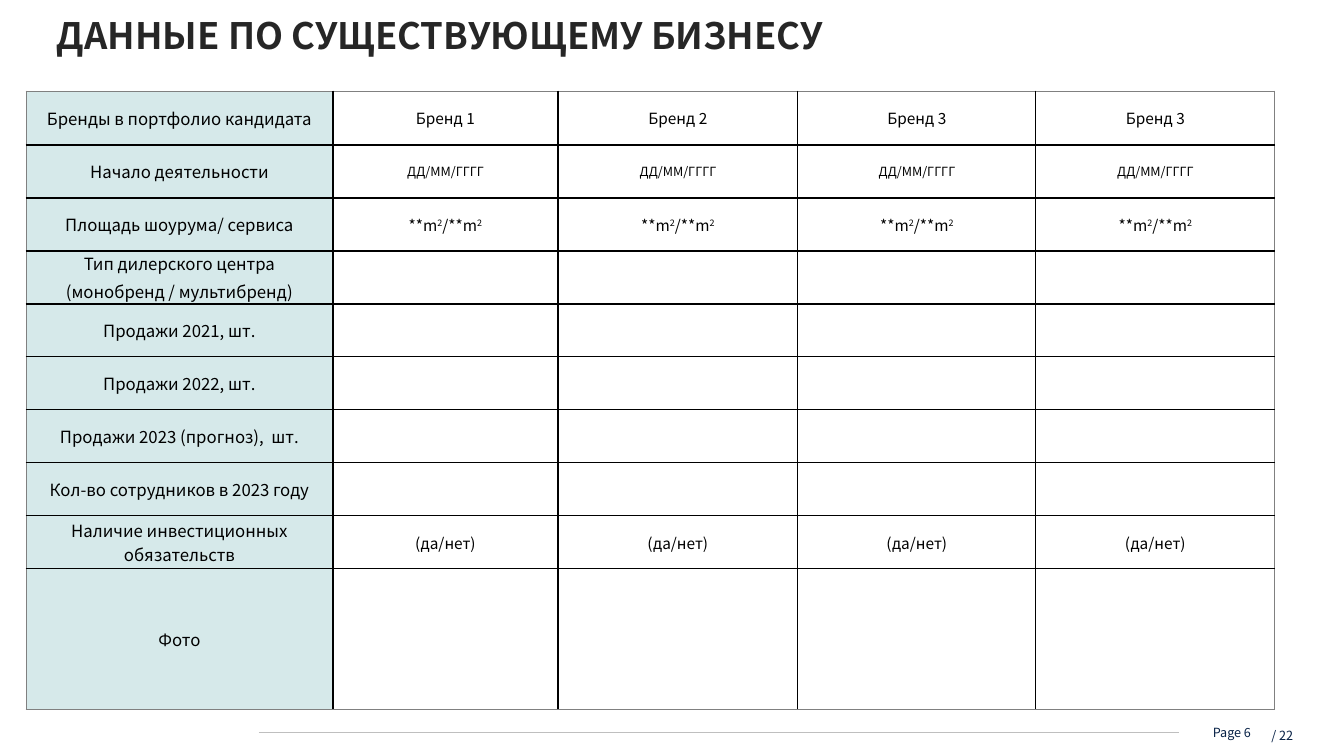
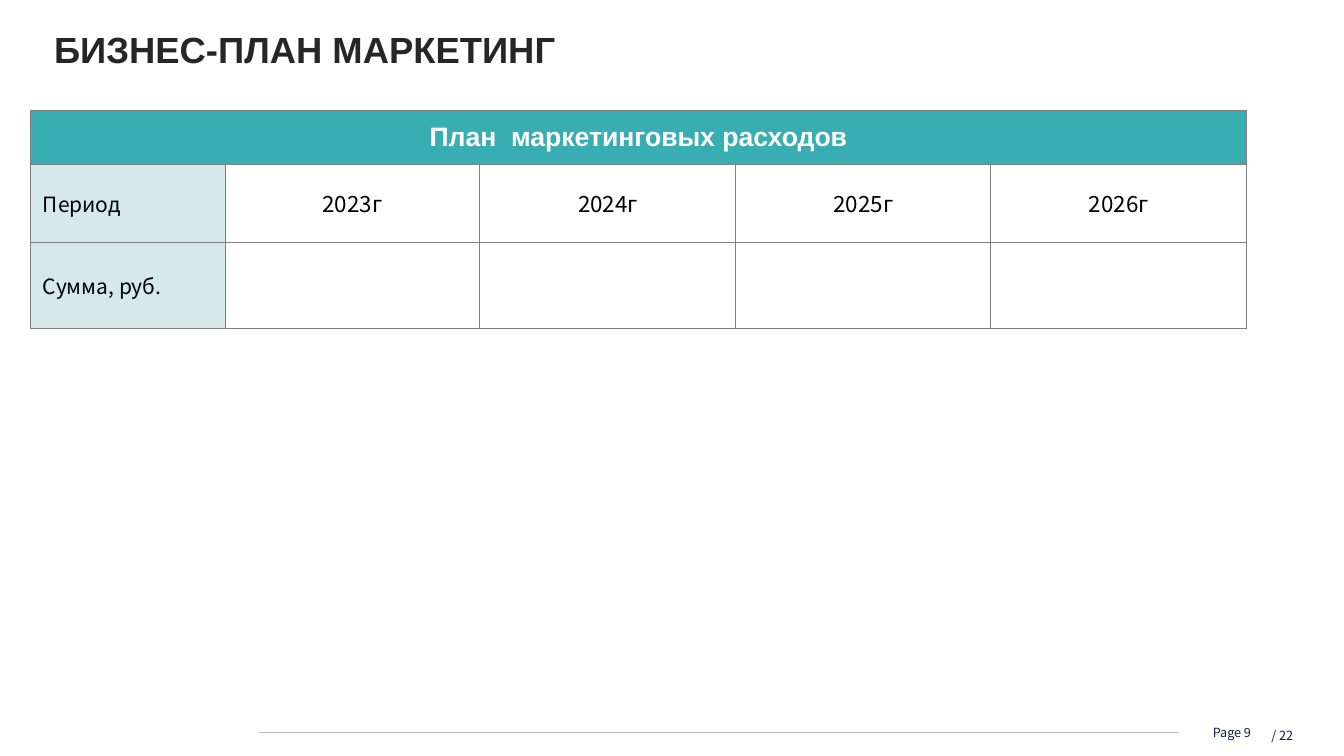
from lxml import etree
from pptx import Presentation
from pptx import util as u
from pptx.dml.color import RGBColor
from pptx.enum import shapes, text
from pptx.oxml import ns

PX = 914400 / 100.8
LEFT, CENTER, RIGHT = text.PP_ALIGN.LEFT, text.PP_ALIGN.CENTER, text.PP_ALIGN.RIGHT


def px(length):
    return u.Emu(round(length * PX))


def rgb(value):
    return RGBColor.from_string(value)


class Deck:
    SANS, ARIAL = "Noto Sans CJK SC", "Arial"
    BLACK, WHITE, INK, NAVY = "000000", "FFFFFF", "262626", "072146"
    GREY, RULE, PALE, TEAL = "808080", "BFBFBF", "D6E9EA", "39AEB2"
    PAGES = 22

    def __init__(self):
        self.deck = Presentation()
        self.deck.slide_width, self.deck.slide_height = px(1344), px(756)
        self.page = None

    # Text
    def style(self, para, size, color, font=SANS, bold=False, align=LEFT):
        para.alignment = align
        para.font.size, para.font.name, para.font.bold = u.Pt(size), font, bold
        para.font.color.rgb = rgb(color)

    def insets(self, frame, left, top, right, bottom):
        frame.margin_left, frame.margin_top = px(left), px(top)
        frame.margin_right, frame.margin_bottom = px(right), px(bottom)

    def label(self, words, left, top, width, height, inset=0, spacing=1.0):
        box = self.page.shapes.add_textbox(px(left), px(top), px(width), px(height))
        frame = box.text_frame
        frame.word_wrap = True
        self.insets(frame, inset, inset, inset, inset)
        para = frame.paragraphs[0]
        para.text, para.line_spacing = words, spacing
        self.style(para, 9, self.NAVY, align=RIGHT)

    # Page frame: title, footer rule and page number
    def add_page(self, title, number, left, top, font, drop=0):
        self.page = self.deck.slides.add_slide(self.deck.slide_layouts[5])
        box = self.page.shapes.title
        box.left, box.top, box.width, box.height = px(left), px(top), px(1228), px(62)
        frame = box.text_frame
        frame.word_wrap, frame.auto_size = True, text.MSO_AUTO_SIZE.NONE
        frame.vertical_anchor = text.MSO_ANCHOR.TOP
        self.insets(frame, 10, drop, 10, 0)
        para = frame.paragraphs[0]
        para.text, para.line_spacing = title, 0.9
        self.style(para, 26, self.INK, font, True)

        self.label(f"Page {number}", 1114, 725, 137, 33)
        self.label(f"/ {self.PAGES}", 1197, 716, 100, 31, 4, 1.5)
        rule = self.page.shapes.add_connector(
            shapes.MSO_CONNECTOR.STRAIGHT, px(259), px(732), px(1179), px(732))
        rule.line.color.rgb, rule.line.width = rgb(self.RULE), u.Pt(0.5)
        etree.SubElement(rule._element.spPr, ns.qn("a:effectLst"))

    # Tables
    def table(self, left, top, widths, heights):
        frame = self.page.shapes.add_table(
            len(heights), len(widths), px(left), px(top), px(sum(widths)), px(sum(heights)))
        table = frame.table
        table.first_row = table.horz_banding = False
        for column, width in zip(table.columns, widths):
            column.width = px(width)
        for row, height in zip(table.rows, heights):
            row.height = px(height)
        return table

    def borders(self, table, inner, weight):
        last_row, last_column = len(table.rows) - 1, len(table.columns) - 1
        for r, row in enumerate(table.rows):
            for c, cell in enumerate(row.cells):
                sides = {"L": c == 0, "R": c == last_column, "T": r == 0, "B": r == last_row}
                for side, outer in sides.items():
                    color, points = (self.GREY, 0.75) if outer else (inner, weight)
                    line = etree.SubElement(cell._tc.get_or_add_tcPr(), ns.qn(f"a:ln{side}"),
                                            w=str(u.Pt(points)))
                    fill = etree.SubElement(line, ns.qn("a:solidFill"))
                    etree.SubElement(fill, ns.qn("a:srgbClr"), val=color)

    def cell(self, cell, words, size, fill=WHITE, color=BLACK, font=SANS,
             bold=False, align=CENTER, inset=(10, 0)):
        """Lines part at a newline; ^2 gives a raised 2."""
        cell.fill.solid()
        cell.fill.fore_color.rgb = rgb(fill)
        cell.vertical_anchor = text.MSO_ANCHOR.MIDDLE
        self.insets(cell, *inset, *inset)
        frame = cell.text_frame
        for i, line in enumerate(words.split("\n")):
            para = frame.add_paragraph() if i else frame.paragraphs[0]
            if i:
                para.space_before = u.Pt(size * 0.2)
            self.style(para, size, color, font, bold, align)
            for j, part in enumerate(line.split("^2")):
                if j:
                    raised = para.add_run()
                    raised.text = "2"
                    raised.font._element.set("baseline", "30000")
                if part:
                    para.add_run().text = part


def business_page(deck):
    deck.add_page("ДАННЫЕ ПО СУЩЕСТВУЮЩЕМУ БИЗНЕСУ", 6, 47, 18, deck.SANS)
    blank = [""] * 4
    rows = [
        ("Бренды в портфолио кандидата", ["Бренд 1", "Бренд 2", "Бренд 3", "Бренд 3"], 11),
        ("Начало деятельности", ["ДД/ММ/ГГГГ"] * 4, 9),
        ("Площадь шоурума/ сервиса", ["**m^2/**m^2"] * 4, 11),
        ("Тип дилерского центра\n(монобренд / мультибренд)", blank, 11),
        ("Продажи 2021, шт.", blank, 11),
        ("Продажи 2022, шт.", blank, 11),
        ("Продажи 2023 (прогноз),  шт.", blank, 11),
        ("Кол-во сотрудников в 2023 году", blank, 11),
        ("Наличие инвестиционных обязательств", ["(да/нет)"] * 4, 11),
        ("Фото", blank, 11),
    ]
    table = deck.table(26, 91, [307, 225, 240, 238, 239], [54] + [53] * 8 + [141])
    deck.borders(table, deck.BLACK, 1)
    for r, (name, values, size) in enumerate(rows):
        deck.cell(table.cell(r, 0), name, 12, deck.PALE)
        for c, value in enumerate(values, 1):
            deck.cell(table.cell(r, c), value, size)


def marketing_page(deck):
    deck.add_page("БИЗНЕС-ПЛАН МАРКЕТИНГ", 9, 44, 25, deck.ARIAL, drop=7)
    inset = (13, 5)
    table = deck.table(30, 110, [195, 255, 256, 255, 256], [54, 78, 87])
    deck.borders(table, deck.GREY, 0.75)
    table.cell(0, 0).merge(table.cell(0, 4))
    deck.cell(table.cell(0, 0), "План  маркетинговых расходов", 19, deck.TEAL,
              deck.WHITE, deck.ARIAL, True, inset=inset)
    rows = [("Период", [f"{year}г" for year in range(2023, 2027)]),
            ("Сумма, руб.", [""] * 4)]
    for r, (name, values) in enumerate(rows, 1):
        deck.cell(table.cell(r, 0), name, 15, deck.PALE, align=LEFT, inset=inset)
        for c, value in enumerate(values, 1):
            deck.cell(table.cell(r, c), value, 16, inset=inset)


def main():
    deck = Deck()
    business_page(deck)
    marketing_page(deck)
    deck.deck.save("out.pptx")


if __name__ == "__main__":
    main()
